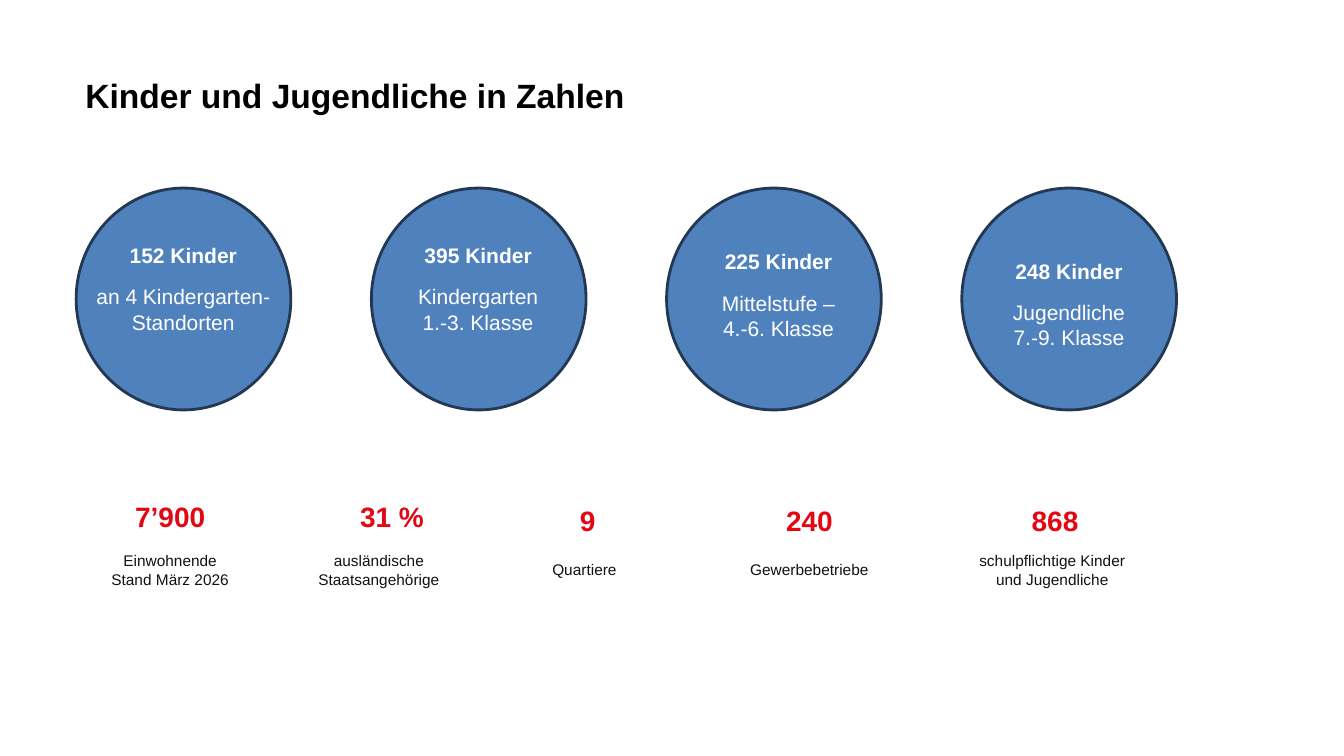
from pptx import Presentation
from pptx.dml.color import RGBColor
from pptx.enum.shapes import MSO_SHAPE as Shape
from pptx.enum.text import MSO_ANCHOR as Anchor, PP_ALIGN as Align
from pptx.util import Cm, Pt


def color(hex_value):
    return RGBColor.from_string(hex_value)


def add_text(box, paragraphs, anchor=Anchor.MIDDLE, align=Align.CENTER, inset=0):
    """Add a text box; box is in cm, paragraphs are (text, font format, space before)."""
    text_box = slide.shapes.add_textbox(*map(Cm, box))
    frame = text_box.text_frame
    frame_format = {"word_wrap": True, "vertical_anchor": anchor}
    for side in ("left", "right", "top", "bottom"):
        frame_format[f"margin_{side}"] = Cm(inset / 2 if side in ("top", "bottom") else inset)
    for name, value in frame_format.items():
        setattr(frame, name, value)
    for index, (text, font_format, space_before) in enumerate(paragraphs):
        paragraph = frame.paragraphs[0] if index == 0 else frame.add_paragraph()
        paragraph.alignment = align
        if space_before:
            paragraph.space_before = Pt(space_before)
        run = paragraph.add_run()
        run.text = text
        for name, value in font_format.items():
            if name == "color":
                run.font.color.rgb = color(value)
            else:
                setattr(run.font, name, value)


TITLE = {"name": "Arial", "size": Pt(24), "bold": True, "color": "000000"}
GROUP = {"name": "Arial", "size": Pt(15), "bold": False, "color": "FFFFFF"}
GROUP_COUNT = {**GROUP, "bold": True}
FIGURE = {"name": "Arial", "size": Pt(20), "bold": True, "color": "E30613"}
LABEL = {"name": "Arial", "size": Pt(11), "bold": False, "color": "111111"}

presentation = Presentation()
presentation.slide_width, presentation.slide_height = Cm(33.87), Cm(19.05)
slide = presentation.slides.add_slide(presentation.slide_layouts[6])

add_text((1.9, 0.81, 30.48, 3.18), [("Kinder und Jugendliche in Zahlen", TITLE, 0)],
         align=Align.LEFT, inset=0.25)

# School groups: text left, top, width; count; description paragraphs
groups = [
    (2.13, 5.99, 4.98, "152 Kinder", ["an 4 Kindergarten- Standorten"]),
    (10.21, 5.99, 3.68, "395 Kinder", ["Kindergarten 1.-3. Klasse"]),
    (17.78, 6.15, 3.68, "225 Kinder", ["Mittelstufe – 4.-6. Klasse"]),
    (25.1, 6.38, 3.68, "248 Kinder", ["Jugendliche", "7.-9. Klasse"]),
]
for column, (left, top, width, count, description) in enumerate(groups):
    circle = slide.shapes.add_shape(
        Shape.OVAL, Cm(1.92 + 7.44 * column), Cm(4.74), Cm(5.41), Cm(5.59))
    circle.shadow.inherit = False
    circle.fill.solid()
    circle.fill.fore_color.rgb = color("4F81BD")
    circle.line.color.rgb = color("233953")
    circle.line.width = Pt(2)
    paragraphs = [(count, GROUP_COUNT, 0)]
    for index, text in enumerate(description):
        paragraphs.append((text, GROUP, 0 if index else 11.5))
    add_text((left, top, width, 2.62), paragraphs, anchor=Anchor.TOP, inset=0.25)

# Key figures: figure left, top, text; label left, lines
key_figures = [
    (2.13, 12.32, "7’900", 2.13, ["Einwohnende", "Stand März 2026"]),
    (7.72, 12.32, "31 %", 7.39, ["ausländische Staatsangehörige"]),
    (12.65, 12.4, "9", 12.57, ["Quartiere"]),
    (18.24, 12.4, "240", 18.24, ["Gewerbebetriebe"]),
    (24.43, 12.4, "868", 24.36, ["schulpflichtige Kinder und Jugendliche"]),
]
for left, top, figure, label_left, label in key_figures:
    add_text((left, top, 4.32, 1.4), [(figure, FIGURE, 0)])
    add_text((label_left, 13.79, 4.32, 1.14), [(line, LABEL, 0) for line in label])

presentation.save("out.pptx")
